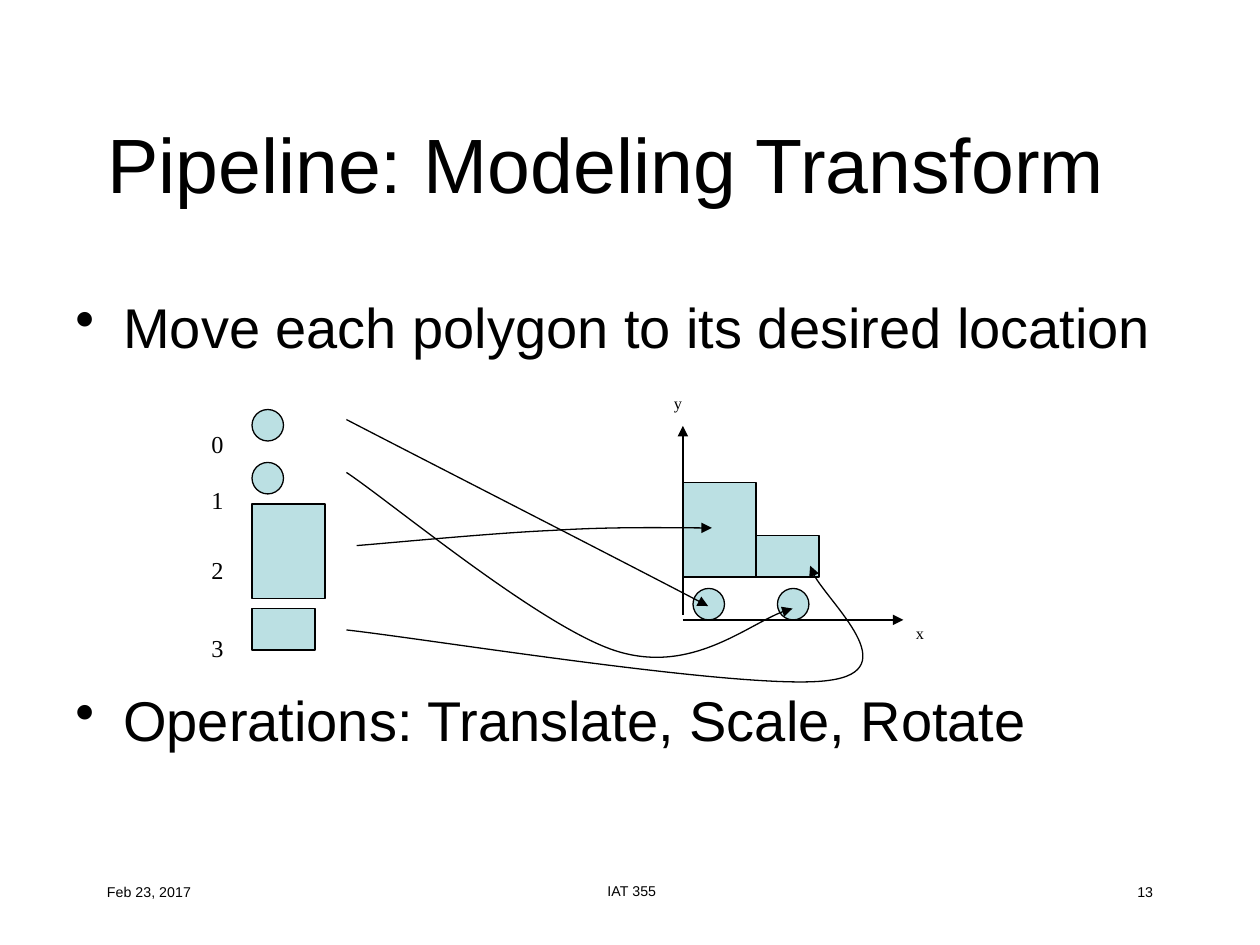
from lxml.etree import SubElement
from pptx import Presentation
from pptx.dml.color import RGBColor
from pptx.enum.shapes import MSO_CONNECTOR, MSO_SHAPE
from pptx.enum.text import MSO_ANCHOR, PP_ALIGN
from pptx.oxml.ns import qn
from pptx.util import Inches, Pt

BLACK = RGBColor(0x00, 0x00, 0x00)
PALE_BLUE = RGBColor(0xBB, 0xE0, 0xE3)

presentation = Presentation()
presentation.slide_width = Inches(10)
presentation.slide_height = Inches(7.5)
slide = presentation.slides.add_slide(presentation.slide_layouts[5])
shapes = slide.shapes


def add_text(box, lines, font, size, align=PP_ALIGN.LEFT, before=0, subscript=True):
    text_box = shapes.add_textbox(*map(Inches, box))
    frame = text_box.text_frame
    frame.word_wrap = True
    frame.text = "\n".join(lines)
    for paragraph in frame.paragraphs:
        paragraph.alignment = align
        paragraph.font.name = font
        paragraph.font.size = Pt(size)
        paragraph.font.color.rgb = BLACK
        if before:
            spacing = SubElement(paragraph._p.get_or_add_pPr(), qn("a:spcBef"))
            SubElement(spacing, qn("a:spcPct"), val=str(before * 1000))
            paragraph._p.pPr.insert(0, spacing)
        if subscript:
            paragraph.runs[0]._r.get_or_add_rPr().set("baseline", "-25000")
    return frame.paragraphs


def style_arrow(arrow):
    arrow.line.color.rgb = BLACK
    arrow.line.width = Pt(0.75)
    SubElement(arrow.line._get_or_add_ln(), qn("a:tailEnd"), type="triangle")


title = shapes.title
title.left, title.top, title.width, title.height = map(Inches, (0.75, 0.67, 8.5, 1.25))
title.text_frame.text = "Pipeline: Modeling Transform"
title.text_frame.vertical_anchor = MSO_ANCHOR.MIDDLE
heading = title.text_frame.paragraphs[0]
heading.alignment = PP_ALIGN.LEFT
heading.font.name = "Arial"
heading.font.size = Pt(44)
heading.font.color.rgb = BLACK

footers = [
    ((0.75, 6.83, 2.08, 0.5), "Feb 23, 2017", PP_ALIGN.LEFT),
    ((3.43, 6.82, 3.17, 0.5), "IAT 355", PP_ALIGN.CENTER),
    ((7.17, 6.83, 2.08, 0.5), "13", PP_ALIGN.RIGHT),
]
for box, text, align in footers:
    add_text(box, [text], "Arial", 14, align)

bullets = add_text(
    (0.5, 2.27, 8.94, 4.56),
    ["Move each polygon to its desired location", "Operations: Translate, Scale, Rotate"],
    "Arial", 32, subscript=False,
)
for paragraph, space in zip(bullets, (3, 186.5)):
    paragraph.space_before = Pt(space)
    properties = paragraph._p.get_or_add_pPr()
    properties.set("marL", str(Inches(0.38)))
    properties.set("indent", str(-Inches(0.38)))
    bullet = SubElement(properties, qn("a:buChar"), char="•")
    properties.find(qn("a:spcBef")).addnext(bullet)

WHEEL = (MSO_SHAPE.OVAL, 0.25, 0.25)
CABIN = (MSO_SHAPE.RECTANGLE, 0.58, 0.75)
HOOD = (MSO_SHAPE.RECTANGLE, 0.5, 0.33)
polygons = [
    (WHEEL, 2, 3.25), (WHEEL, 2, 3.67), (CABIN, 2, 4), (HOOD, 2, 4.83),
    (CABIN, 5.42, 3.83), (HOOD, 6, 4.25), (WHEEL, 5.5, 4.67), (WHEEL, 6.17, 4.67),
]
for (kind, width, height), left, top in polygons:
    shape = shapes.add_shape(kind, Inches(left), Inches(top), Inches(width), Inches(height))
    shape.shadow.inherit = False
    shape.fill.solid()
    shape.fill.fore_color.rgb = PALE_BLUE
    shape.line.color.rgb = BLACK
    shape.line.width = Pt(0.75)

numbers = add_text((1.58, 3.25, 0.33, 1.98), "0123", "Times New Roman", 24, before=50)
for paragraph in numbers[:2]:
    paragraph.line_spacing = 0.6

for ends in [(5.42, 4.92, 7.17, 4.92), (5.42, 4.88, 5.42, 3.38)]:
    axis = shapes.add_connector(MSO_CONNECTOR.STRAIGHT, *map(Inches, ends))
    style_arrow(axis)
    SubElement(axis._element.spPr, qn("a:effectLst"))

for label, left, top in [("x", 7.17, 4.75), ("y", 5.25, 2.92)]:
    add_text((left, top, 0.33, 0.37), [label], "Times New Roman", 16, before=50)

curves = [
    [(2.75, 3.75), (3.11, 3.99), (4.31, 4.99), (4.9, 5.17), (5.49, 5.35), (6, 4.9), (6.29, 4.83)],
    [(2.75, 3.33), (3.23, 3.58), (5.03, 4.5), (5.62, 4.81)],
    [(2.83, 4.33), (3.09, 4.31), (3.91, 4.23), (4.38, 4.21), (4.84, 4.18), (5.38, 4.19), (5.65, 4.19)],
    [(2.75, 5), (3.39, 5.07), (5.97, 5.49), (6.58, 5.4), (7.19, 5.32), (6.46, 4.68), (6.43, 4.49)],
]
for start, *points in curves:
    builder = shapes.build_freeform(*start, scale=Inches(1))
    builder = shapes.build_freeform(Inches(start[0]), Inches(start[1]))
    builder.add_line_segments([(Inches(x), Inches(y)) for x, y in points], close=False)
    curve = builder.convert_to_shape()
    curve.shadow.inherit = False
    curve.fill.background()
    style_arrow(curve)
    segments = list(curve._element.iter(qn("a:lnTo")))
    outline = segments[0].getparent()
    for first in range(0, len(segments), 3):
        bezier = SubElement(outline, qn("a:cubicBezTo"))
        for segment in segments[first:first + 3]:
            bezier.append(segment[0])
            outline.remove(segment)

presentation.save("out.pptx")
